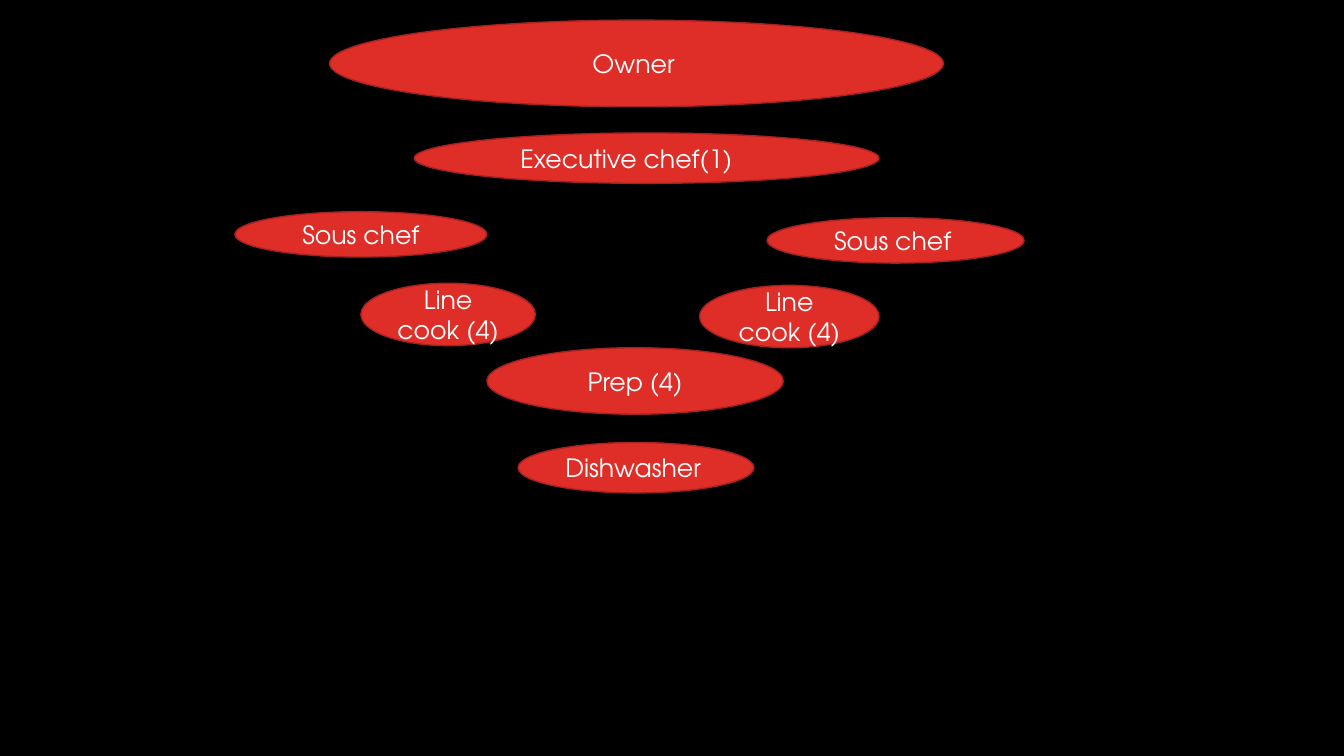
from pptx import Presentation
from pptx.dml.color import RGBColor
from pptx.enum import shapes, text
from pptx.util import Pt

COLOURS = {"background": "000000", "fill": "DF2E28", "outline": "A5221E", "label": "FFFFFF"}
FONT = "TeX Gyre Adventor"
INSET = 7.2

# label, left, top, width, height, extra right inset
ROLES = [
    ("Owner", 235.4, 14.4, 438.5, 61.9, 4),
    ("Sous chef", 167.8, 151.2, 180, 32.4, 0),
    ("Sous chef", 547.9, 155.5, 183.6, 32.4, 4),
    ("Line cook (4)", 257.8, 202.3, 124.6, 44.6, 0),
    ("Line cook (4)", 499.7, 203.8, 128.2, 44.6, 0),
    ("Executive chef(1)", 295.9, 95, 331.9, 36, 29),
    ("Prep (4)", 347.8, 248.4, 211.7, 47.5, 0),
    ("Dishwasher", 370.1, 316.1, 168.5, 36, 4),
]


def colour(name):
    return RGBColor.from_string(COLOURS[name])


def add_role(slide, label, left, top, width, height, extra_inset):
    """Add a labelled ellipse; extra_inset moves the label left of centre."""
    shape = slide.shapes.add_shape(
        shapes.MSO_SHAPE.OVAL, Pt(left), Pt(top), Pt(width), Pt(height))
    shape.shadow.inherit = False
    shape.fill.solid()
    shape.fill.fore_color.rgb = colour("fill")
    shape.line.color.rgb = colour("outline")
    shape.line.width = Pt(1)

    frame = shape.text_frame
    frame.word_wrap = True
    frame.vertical_anchor = text.MSO_ANCHOR.MIDDLE
    frame.margin_right = Pt(INSET + extra_inset)
    frame.text = label
    paragraph = frame.paragraphs[0]
    paragraph.alignment = text.PP_ALIGN.CENTER
    font = paragraph.runs[0].font
    font.name = FONT
    font.size = Pt(18)
    font.color.rgb = colour("label")


def main():
    presentation = Presentation()
    presentation.slide_width = Pt(960)
    presentation.slide_height = Pt(540)
    slide = presentation.slides.add_slide(presentation.slide_layouts[6])
    slide.background.fill.solid()
    slide.background.fill.fore_color.rgb = colour("background")
    for role in ROLES:
        add_role(slide, *role)
    presentation.save("out.pptx")


if __name__ == "__main__":
    main()
